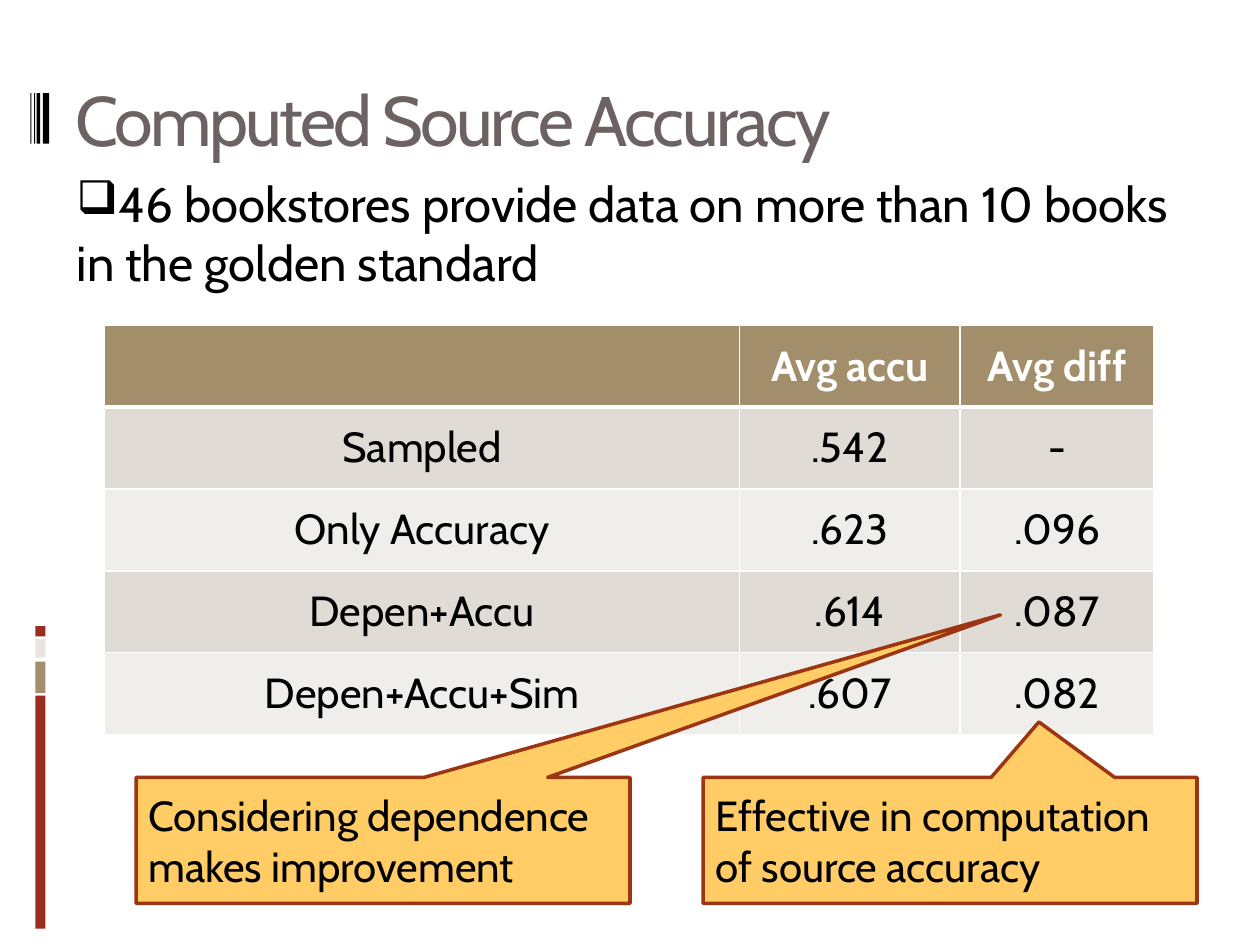
from lxml import etree
from pptx import Presentation
from pptx.dml.color import RGBColor
from pptx.enum.shapes import MSO_SHAPE
from pptx.enum.text import MSO_ANCHOR, PP_ALIGN
from pptx.oxml.ns import qn
from pptx.util import Inches, Pt

RECTANGLE = MSO_SHAPE.RECTANGLE
CALLOUT = MSO_SHAPE.RECTANGULAR_CALLOUT
MIDDLE = MSO_ANCHOR.MIDDLE
TOP = MSO_ANCHOR.TOP
CENTER = PP_ALIGN.CENTER
LEFT = PP_ALIGN.LEFT

FONT = "Cabin"
COLORS = {
    "black": "000000",
    "white": "FFFFFF",
    "title": "6C6262",
    "red": "9B2D1F",
    "tan": "A28E6A",
    "cream": "E9E5DC",
    "band_dark": "E0DBD4",
    "band_light": "F0EEEB",
    "callout": "FFCC66",
    "callout_edge": "9C3511",
}
ACCURACY_ROWS = [
    ("", "Avg accu", "Avg diff"),
    ("Sampled", ".542", "-"),
    ("Only Accuracy", ".623", ".096"),
    ("Depen+Accu", ".614", ".087"),
    ("Depen+Accu+Sim", ".607", ".082"),
]


def color(name):
    """Return the named colour."""
    return RGBColor.from_string(COLORS[name])


def to_lengths(box):
    """Turn a box given in inches into lengths."""
    return [Inches(value) for value in box]


def write(frame, text, size, ink, anchor=MIDDLE, align=LEFT, bold=False):
    """Write one formatted paragraph and return it."""
    frame.word_wrap = True
    frame.vertical_anchor = anchor
    frame.text = text
    paragraph = frame.paragraphs[0]
    paragraph.alignment = align
    for run in paragraph.runs:
        run.font.name = FONT
        run.font.size = Pt(size)
        run.font.bold = bold
        run.font.color.rgb = color(ink)
    return paragraph


def add_block(slide, box, fill, kind=RECTANGLE):
    """Add a filled shape without line or shadow."""
    block = slide.shapes.add_shape(kind, *to_lengths(box))
    block.shadow.inherit = False
    block.fill.solid()
    block.fill.fore_color.rgb = color(fill)
    block.line.fill.background()
    return block


def add_side_bars(slide, box):
    """Stack the coloured bars of the left margin."""
    left, top, width, _ = box
    bars = [(0, 0.08, "red"), (0.1, 0.15, "cream"),
            (0.28, 0.25, "tan"), (0.55, 1.85, "red")]
    for offset, height, fill in bars:
        add_block(slide, (left, top + offset, width, height), fill)


def add_title_stripes(slide, box):
    """Draw the black stripes beside the title."""
    left, top, _, height = box
    for offset, width in [(0, 0.01), (0.03, 0.01), (0.05, 0.03), (0.1, 0.05)]:
        add_block(slide, (left + offset, top, width, height), "black")


def add_title(slide, box, text):
    """Add the title with tightened letter spacing."""
    title = slide.shapes.add_textbox(*to_lengths(box))
    paragraph = write(title.text_frame, text, 40, "title")
    for run in paragraph.runs:
        run.font._element.set("spc", "-150")


def add_statement(slide, box, text):
    """Add the bulleted statement on its white panel."""
    panel = add_block(slide, box, "white")
    paragraph = write(panel.text_frame, text, 28, "black", anchor=TOP)
    paragraph.space_before = Pt(7)
    properties = paragraph._p.get_or_add_pPr()
    properties.set("marL", "0")
    properties.set("indent", "0")
    etree.SubElement(properties, qn("a:buSzPct")).set("val", "95000")
    etree.SubElement(properties, qn("a:buChar")).set("char", "❑")


def add_borders(cell, widths):
    """Give a cell white borders of the given point widths by side."""
    properties = cell._tc.get_or_add_tcPr()
    for side, width in widths.items():
        border = etree.SubElement(properties, qn(f"a:ln{side}"))
        border.set("w", str(Pt(width)))
        fill = etree.SubElement(border, qn("a:solidFill"))
        etree.SubElement(fill, qn("a:srgbClr")).set("val", COLORS["white"])


def add_accuracy_table(slide, box, rows):
    """Add the accuracy table with a header and banded rows."""
    table = slide.shapes.add_table(len(rows), len(rows[0]), *to_lengths(box)).table
    for column, width in zip(table.columns, (5.04, 1.75, 1.54)):
        column.width = Inches(width)
    for row_index, row in enumerate(rows):
        header = row_index == 0
        band = "band_dark" if row_index % 2 else "band_light"
        widths = {"L": 1, "R": 1, "T": 3 if row_index == 1 else 1, "B": 3 if header else 1}
        for column_index, text in enumerate(row):
            cell = table.cell(row_index, column_index)
            add_borders(cell, widths)
            cell.fill.solid()
            cell.fill.fore_color.rgb = color("tan" if header else band)
            write(cell.text_frame, text, 24, "white" if header else "black",
                  align=CENTER, bold=header)
            cell.vertical_anchor = MIDDLE


def add_callout(slide, box, text, tip):
    """Add a callout whose tip is relative to its centre and size."""
    callout = add_block(slide, box, "callout", CALLOUT)
    callout.adjustments[0], callout.adjustments[1] = tip
    callout.line.color.rgb = color("callout_edge")
    callout.line.width = Pt(2)
    write(callout.text_frame, text, 24, "black")


def build_accuracy_slide(presentation):
    """Build the slide on computed source accuracy."""
    slide = presentation.slides.add_slide(presentation.slide_layouts[6])
    add_side_bars(slide, (0.28, 4.97, 0.08, 2.4))
    add_title_stripes(slide, (0.24, 0.74, 0.15, 0.4))
    add_statement(slide, (0.51, 1.33, 8.99, 5.83),
                  "46 bookstores provide data on more than 10 books in the golden standard")
    add_title(slide, (0.5, 0.23, 9, 1.42), "Computed Source Accuracy")
    add_accuracy_table(slide, (0.83, 2.58, 8.33, 3.25), ACCURACY_ROWS)
    callouts = [
        (5.58, "Effective in computation of source accuracy", (0.18, -0.94)),
        (1.08, "Considering dependence makes improvement", (1.25, -1.79)),
    ]
    for left, text, tip in callouts:
        add_callout(slide, (left, 6.17, 3.92, 1), text, tip)


def main():
    """Create and save the presentation."""
    presentation = Presentation()
    presentation.slide_width = Inches(10)
    presentation.slide_height = Inches(7.5)
    build_accuracy_slide(presentation)
    presentation.save("out.pptx")


if __name__ == "__main__":
    main()
